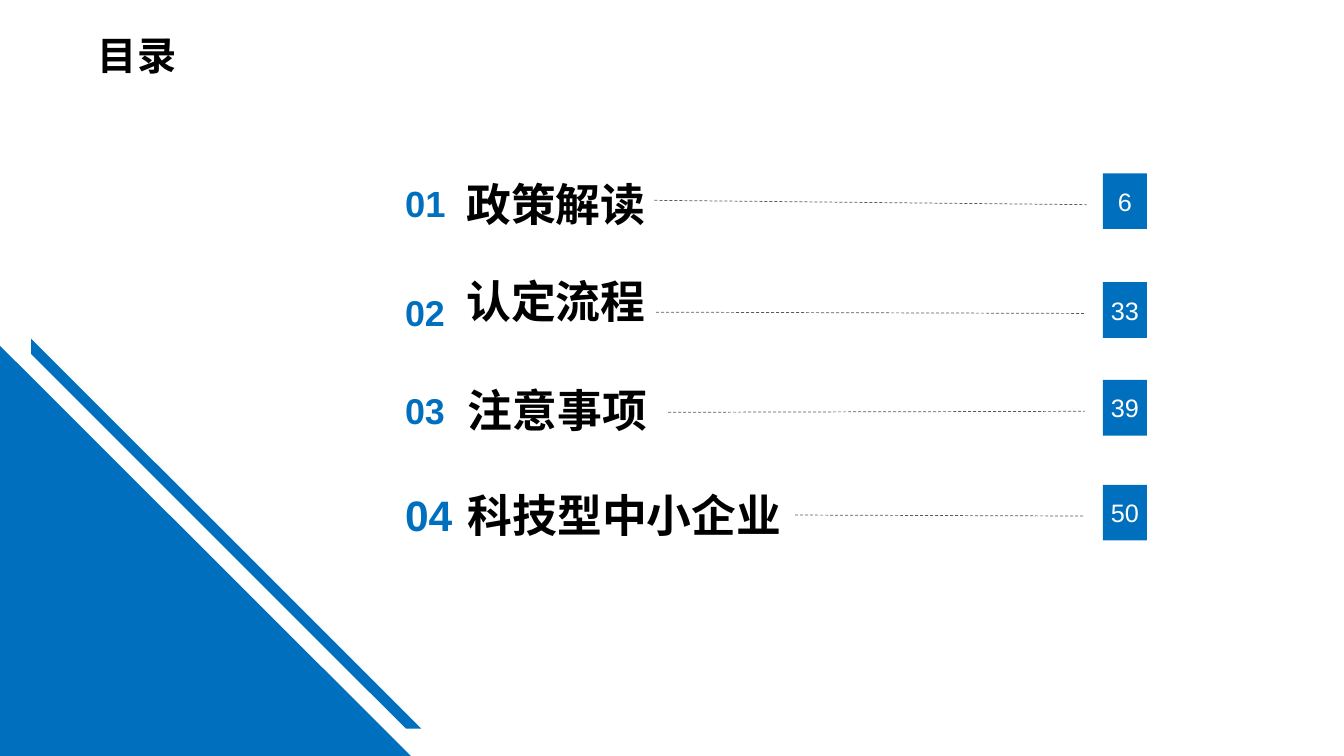
import pptx
import pptx.dml.color
import pptx.enum.dml
import pptx.enum.shapes
import pptx.enum.text
import pptx.oxml.ns
import pptx.util
from lxml import etree

Pt = pptx.util.Pt
PP_ALIGN = pptx.enum.text.PP_ALIGN
BLUE, GREY, BLACK, WHITE = "0070BE", "595959", "000000", "FFFFFF"
CJK = "Noto Sans CJK SC"


def paint(color_format, color):
    color_format.rgb = pptx.dml.color.RGBColor.from_string(color)


def write(sp, text, size, color, bold=True, align=PP_ALIGN.LEFT, font="Arial", inset=0):
    tf = sp.text_frame
    tf.text = text
    tf.word_wrap = True
    tf.auto_size = pptx.enum.text.MSO_AUTO_SIZE.NONE
    tf.vertical_anchor = pptx.enum.text.MSO_ANCHOR.MIDDLE
    tf.margin_left = tf.margin_right = Pt(inset)
    tf.margin_top = tf.margin_bottom = Pt(inset / 2)
    p = tf.paragraphs[0]
    p.alignment = align
    r = p.runs[0]
    r.font.name = font
    r.font.size = Pt(size)
    r.font.bold = bold
    paint(r.font.color, color)
    ea = etree.SubElement(r.font._element, pptx.oxml.ns.qn("a:ea"))
    ea.set("typeface", CJK)


prs = pptx.Presentation()
prs.slide_width, prs.slide_height = Pt(960), Pt(540)
s = prs.slides.add_slide(prs.slide_layouts[5])

# Corner triangle and diagonal stripe
triangle = [(0, 247), (293.5, 540), (0, 540)]
stripe = [(22.3, 242), (301, 520.5), (290, 520.5), (22.3, 253)]
fb = s.shapes.build_freeform(Pt(triangle[0][0]), Pt(triangle[0][1]), scale=1.0)
fb.add_line_segments([(Pt(x), Pt(y)) for x, y in triangle[1:]], close=True)
fb.move_to(Pt(stripe[0][0]), Pt(stripe[0][1]))
fb.add_line_segments([(Pt(x), Pt(y)) for x, y in stripe[1:]], close=True)
sp = fb.convert_to_shape()
sp.shadow.inherit = False
sp.fill.solid()
paint(sp.fill.fore_color, BLUE)
sp.line.fill.background()

# Slide title
title = s.shapes.title
title.left, title.top, title.width, title.height = Pt(62.8), Pt(18), Pt(312), Pt(43)
write(title, "目录", 28, BLACK, font=CJK, inset=7.2)

# Contents rows: number, size, heading, page, row top, heading left and top,
# leader start x, start y, end x, end y
rows = [
    ("01", 26, "政策解读", "6", 123.8, 333, 125.3, 467.5, 143.1, 776.2, 146.2),
    ("02", 25.6, "认定流程", "33", 201.6, 333, 195.1, 468.7, 223, 774.7, 223.9),
    ("03", 25.6, "注意事项", "39", 271.4, 334, 272.9, 477.3, 294.5, 774.7, 293.8),
    ("04", 30.4, "科技型中小企业", "50", 346.3, 334, 347.8, 568, 367.9, 774.7, 368.6),
]
ROW_H = 39.8
for number, size, heading, page, top, left, heading_top, x1, y1, x2, y2 in rows:
    g = s.shapes.add_group_shape()

    # Heading
    sp = g.shapes.add_textbox(Pt(left), Pt(heading_top), Pt(234), Pt(ROW_H))
    write(sp, heading, 32, BLACK)

    # Dashed leader
    ln = g.shapes.add_connector(pptx.enum.shapes.MSO_CONNECTOR.STRAIGHT,
                                Pt(x1), Pt(y1), Pt(x2), Pt(y2))
    paint(ln.line.color, GREY)
    ln.line.width = Pt(0.5)
    ln.line.dash_style = pptx.enum.dml.MSO_LINE.DASH
    etree.SubElement(ln._element.spPr, pptx.oxml.ns.qn("a:effectLst"))

    # Page number box
    sp = g.shapes.add_shape(pptx.enum.shapes.MSO_SHAPE.RECTANGLE,
                            Pt(787.7), Pt(top), Pt(31.6), Pt(ROW_H))
    sp.shadow.inherit = False
    sp.fill.solid()
    paint(sp.fill.fore_color, BLUE)
    sp.line.fill.background()
    write(sp, page, 18, WHITE, bold=False, align=PP_ALIGN.CENTER)

    # Section number
    sp = g.shapes.add_textbox(Pt(289.3), Pt(top + 1.5), Pt(34.6), Pt(ROW_H))
    write(sp, number, size, BLUE)

prs.save("out.pptx")
